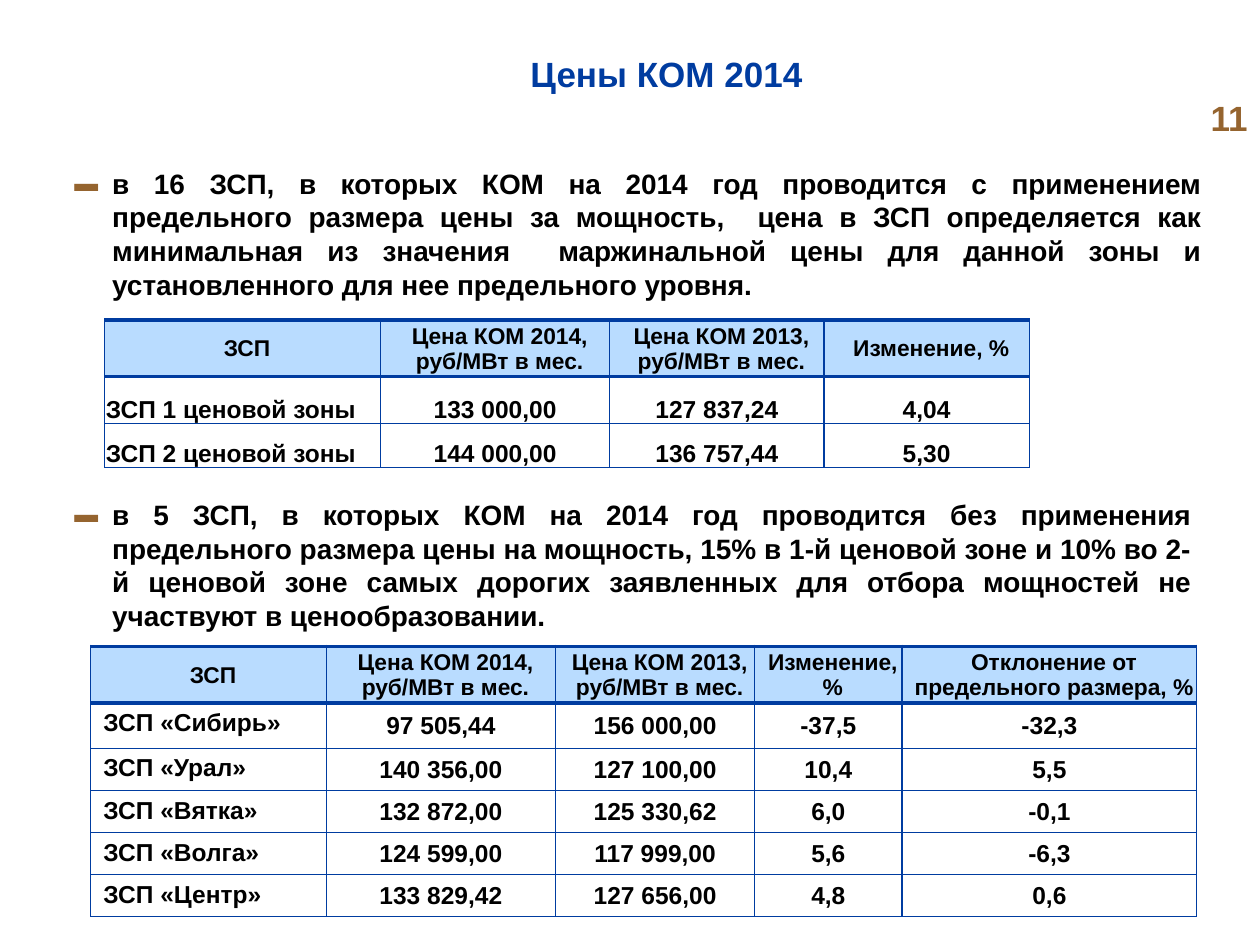
from dataclasses import dataclass

from lxml import etree
from pptx import Presentation
from pptx import util as u
from pptx.dml.color import RGBColor
from pptx.enum import text as t
from pptx.oxml import ns

CELL = 0.1  # inches; the slide is a grid of 100 columns by 75 rows


@dataclass(frozen=True)
class Theme:
    font: str = "Arial"
    ink: str = "000000"
    accent: str = "003CA0"
    header: str = "B9DCFF"
    bullet: str = "95642F"
    title_size: int = 20
    body_size: int = 16
    cell_size: int = 14
    header_size: int = 13
    thin: float = 0.75
    thick: float = 2.25


@dataclass(frozen=True)
class Area:
    """A rectangle in grid columns and rows."""
    col: float
    row: float
    cols: float
    rows: float


@dataclass(frozen=True)
class PriceTable:
    col: float
    row: float
    col_widths: tuple
    row_heights: tuple
    rows: tuple
    label_margins: tuple
    label_anchor: t.MSO_ANCHOR
    value_anchor: t.MSO_ANCHOR


THEME = Theme()
TIGHT = (0.01, 0.01, 0.01, 0)
HEADER_MARGINS = (0.08, 0.01, 0.01, 0)
LABEL_MARGINS = (0.1, 0.05, 0.1, 0.05)
HEADINGS = ("ЗСП", "Цена КОМ 2014, руб/МВт в мес.",
            "Цена КОМ 2013, руб/МВт в мес.", "Изменение, %")

CAPPED_RULE = (
    "в 16 ЗСП, в которых КОМ на 2014 год проводится с применением предельного "
    "размера цены за мощность,  цена в ЗСП определяется как минимальная из "
    "значения  маржинальной цены для данной зоны и установленного для нее "
    "предельного уровня.")
UNCAPPED_RULE = (
    "в 5 ЗСП, в которых КОМ на 2014 год проводится без применения предельного "
    "размера цены на мощность, 15% в 1-й ценовой зоне и 10% во 2-й ценовой зоне "
    "самых дорогих заявленных для отбора мощностей не участвуют в "
    "ценообразовании.")

CAPPED_PRICES = PriceTable(
    8.3, 25.4, (21.9, 18.2, 17, 16.3), (4.5, 3.7, 3.5),
    (HEADINGS,
     ("ЗСП 1 ценовой зоны", "133 000,00", "127 837,24", "4,04"),
     ("ЗСП 2 ценовой зоны", "144 000,00", "136 757,44", "5,30")),
    TIGHT, t.MSO_ANCHOR.BOTTOM, t.MSO_ANCHOR.BOTTOM)
UNCAPPED_PRICES = PriceTable(
    7.2, 51.3, (18.7, 18.2, 15.8, 11.7, 23.4), (4.5, 3.6) + (3.33,) * 4,
    (HEADINGS + ("Отклонение от предельного размера, %",),
     ("ЗСП «Сибирь»", "97 505,44", "156 000,00", "-37,5", "-32,3"),
     ("ЗСП «Урал»", "140 356,00", "127 100,00", "10,4", "5,5"),
     ("ЗСП «Вятка»", "132 872,00", "125 330,62", "6,0", "-0,1"),
     ("ЗСП «Волга»", "124 599,00", "117 999,00", "5,6", "-6,3"),
     ("ЗСП «Центр»", "133 829,42", "127 656,00", "4,8", "0,6")),
    LABEL_MARGINS, t.MSO_ANCHOR.TOP, t.MSO_ANCHOR.MIDDLE)


def grid(count: float) -> u.Inches:
    return u.Inches(count * CELL)


def place(shape, area: Area) -> None:
    shape.left, shape.top = grid(area.col), grid(area.row)
    shape.width, shape.height = grid(area.cols), grid(area.rows)


def write(frame, words: str, *, size: int, color: str = THEME.ink,
          align=t.PP_ALIGN.CENTER, anchor=t.MSO_ANCHOR.MIDDLE,
          bulleted: bool = False) -> None:
    frame.word_wrap = True
    frame.vertical_anchor = anchor
    paragraph = frame.paragraphs[0]
    paragraph.alignment = align
    if bulleted:
        add_bullet(paragraph)
    run = paragraph.add_run()
    run.text = words
    run.font.name, run.font.size, run.font.bold = THEME.font, u.Pt(size), True
    run.font.color.rgb = RGBColor.from_string(color)


def add_bullet(paragraph) -> None:
    paragraph.level = 1
    paragraph.space_before = u.Pt(0)
    props = paragraph._p.get_or_add_pPr()
    props.set("marL", str(u.Inches(0.79)))
    props.set("indent", str(u.Inches(-0.3)))
    color = etree.SubElement(props, ns.qn("a:buClr"))
    etree.SubElement(color, ns.qn("a:srgbClr"), val=THEME.bullet)
    etree.SubElement(props, ns.qn("a:buSzPct"), val="85000")
    etree.SubElement(props, ns.qn("a:buFont"), typeface=THEME.font)
    etree.SubElement(props, ns.qn("a:buChar"), char="▬")


def add_borders(cell, top: float, bottom: float) -> None:
    """Draw all four sides; the widths of the left and right are thin."""
    props = cell._tc.get_or_add_tcPr()
    widths = {"L": THEME.thin, "R": THEME.thin, "T": top, "B": bottom}
    for side, width in widths.items():
        line = etree.SubElement(props, ns.qn(f"a:ln{side}"), w=str(u.Pt(width)))
        fill = etree.SubElement(line, ns.qn("a:solidFill"))
        etree.SubElement(fill, ns.qn("a:srgbClr"), val=THEME.accent)


def format_cell(cell, words: str, prices: PriceTable, row: int, col: int) -> None:
    is_header, is_label = row == 0, row > 0 and col == 0
    add_borders(cell, top=THEME.thick if row < 2 else THEME.thin,
                bottom=THEME.thick if is_header else THEME.thin)
    margins, anchor = TIGHT, prices.value_anchor
    if is_header:
        margins, anchor = HEADER_MARGINS, t.MSO_ANCHOR.MIDDLE
        cell.fill.solid()
        cell.fill.fore_color.rgb = RGBColor.from_string(THEME.header)
    else:
        cell.fill.background()
    if is_label:
        margins, anchor = prices.label_margins, prices.label_anchor
    (cell.margin_left, cell.margin_top,
     cell.margin_right, cell.margin_bottom) = map(u.Inches, margins)
    write(cell.text_frame, words,
          size=THEME.header_size if is_header else THEME.cell_size,
          align=t.PP_ALIGN.LEFT if is_label else t.PP_ALIGN.CENTER)
    cell.vertical_anchor = anchor


def add_prices(slide, prices: PriceTable) -> None:
    table = slide.shapes.add_table(
        len(prices.rows), len(prices.col_widths), grid(prices.col), grid(prices.row),
        grid(sum(prices.col_widths)), grid(sum(prices.row_heights))).table
    table.first_row = table.horz_banding = False
    for column, width in zip(table.columns, prices.col_widths):
        column.width = grid(width)
    for row, (line, height) in enumerate(zip(prices.rows, prices.row_heights)):
        table.rows[row].height = grid(height)
        for col, words in enumerate(line):
            format_cell(table.cell(row, col), words, prices, row, col)


def add_rule(body, words: str, area: Area) -> None:
    place(body, area)
    body.text_frame.auto_size = t.MSO_AUTO_SIZE.NONE
    write(body.text_frame, words, size=THEME.body_size, bulleted=True,
          align=t.PP_ALIGN.JUSTIFY, anchor=t.MSO_ANCHOR.TOP)


def main() -> None:
    deck = Presentation()
    deck.slide_width, deck.slide_height = grid(100), grid(75)
    slide = deck.slides.add_slide(deck.slide_layouts.get_by_name("Two Content"))
    title, capped, uncapped = slide.placeholders

    place(title, Area(12.2, 0, 81.4, 11.6))
    write(title.text_frame, "Цены КОМ 2014", size=THEME.title_size,
          color=THEME.accent)
    page = slide.shapes.add_textbox(0, 0, 0, 0)
    place(page, Area(93.7, 6, 6.3, 5.5))
    page.text_frame.margin_right = u.Inches(0.1)
    write(page.text_frame, "11", size=THEME.title_size, color=THEME.bullet,
          align=t.PP_ALIGN.RIGHT, anchor=t.MSO_ANCHOR.BOTTOM)

    add_rule(capped, CAPPED_RULE, Area(0, 12.7, 96.4, 11.8))
    add_prices(slide, CAPPED_PRICES)
    add_rule(uncapped, UNCAPPED_RULE, Area(0, 39, 95.6, 11.8))
    add_prices(slide, UNCAPPED_PRICES)
    deck.save("out.pptx")


if __name__ == "__main__":
    main()
